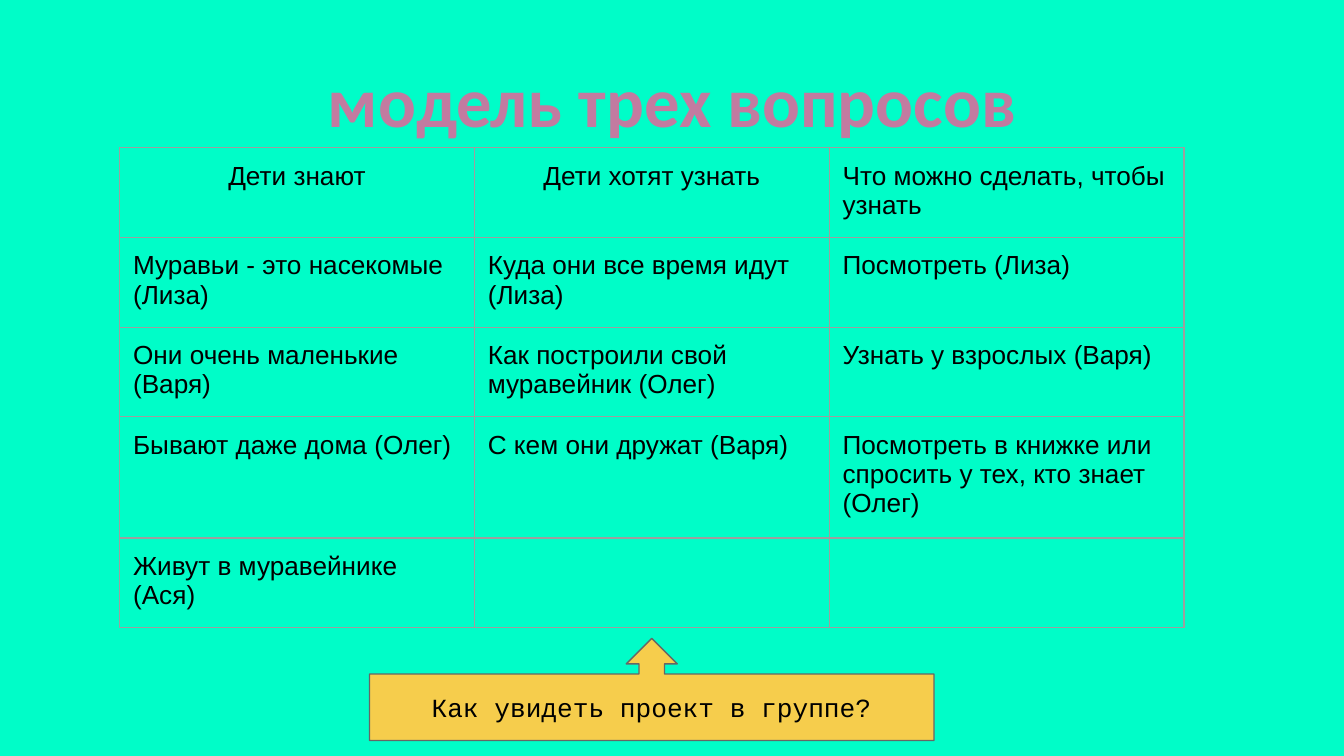
from dataclasses import dataclass

from lxml.etree import SubElement
from pptx import Presentation
from pptx.dml.color import RGBColor
from pptx.enum.shapes import MSO_SHAPE as Preset
from pptx.enum.text import MSO_ANCHOR as Anchor, PP_ALIGN as Align
from pptx.oxml.ns import qn
from pptx.util import Inches, Pt

WIDTH = 10
HEIGHT = WIDTH * 9 / 16


@dataclass(frozen=True)
class Theme:
    background: str = "00FDC8"
    title: str = "C27BA0"
    text: str = "000000"
    grid: str = "9E9E9E"
    callout: str = "F6CD4C"
    outline: str = "666666"
    title_size: float = 37.8
    text_size: float = 14
    line_width: float = 0.75
    inset: float = 0.1


@dataclass(frozen=True)
class Area:
    """A rectangle in inches."""
    left: float
    top: float
    width: float
    height: float

    def emu(self) -> tuple:
        return tuple(Inches(v) for v in (self.left, self.top, self.width, self.height))


@dataclass(frozen=True)
class Style:
    font: str
    size: float
    color: str
    bold: bool = False
    align: Align = Align.LEFT


THEME = Theme()
TITLE = Style("Calibri", THEME.title_size, THEME.title, True, Align.CENTER)
BODY = Style("Arial", THEME.text_size, THEME.text)
HEADING = Style("Arial", THEME.text_size, THEME.text, align=Align.CENTER)
CALLOUT = Style("Courier New", THEME.text_size, THEME.text, align=Align.CENTER)

TITLE_AREA = Area(0.34, 0.32, WIDTH - 2 * 0.34, 0.88)
TABLE_AREA = Area(0.89, 1.1, 3 * 2.64, 3.57)
CALLOUT_AREA = Area(2.75, 4.75, 4.2, 0.76)
ROW_HEIGHT = 0.42  # minimum: rows grow with their text
QUESTIONS = [
    ("Дети знают", "Дети хотят узнать", "Что можно сделать, чтобы узнать"),
    ("Муравьи - это насекомые (Лиза)", "Куда они все время идут (Лиза)",
     "Посмотреть (Лиза)"),
    ("Они очень маленькие (Варя)", "Как построили свой муравейник (Олег)",
     "Узнать у взрослых (Варя)"),
    ("Бывают даже дома (Олег)", "С кем они дружат (Варя)",
     "Посмотреть в книжке или спросить у тех, кто знает (Олег)"),
    ("Живут в муравейнике (Ася)", "", ""),
]


def rgb(color: str) -> RGBColor:
    return RGBColor.from_string(color)


def set_insets(holder) -> None:
    """Give a text frame or a table cell equal margins."""
    for side in ("left", "top", "right", "bottom"):
        setattr(holder, f"margin_{side}", Inches(THEME.inset))


def write(frame, text: str, style: Style) -> None:
    para = frame.paragraphs[0]
    para.alignment = style.align
    if text:
        span = para.add_run()
        span.text = text
        span.font.name = style.font
        span.font.size = Pt(style.size)
        span.font.bold = style.bold
        span.font.color.rgb = rgb(style.color)
    # The paragraph mark takes the text size, so it does not stretch the line
    SubElement(para._p, qn("a:endParaRPr"), sz=str(round(style.size * 100)))


def add_borders(cell) -> None:
    properties = cell._tc.get_or_add_tcPr()
    for index, tag in enumerate(("a:lnL", "a:lnR", "a:lnT", "a:lnB")):
        line = SubElement(properties, qn(tag), w=str(Pt(THEME.line_width)))
        fill = SubElement(line, qn("a:solidFill"))
        SubElement(fill, qn("a:srgbClr"), val=THEME.grid)
        properties.insert(index, line)  # borders come before the fill


def add_title(page, area: Area, text: str) -> None:
    frame = page.shapes.add_textbox(*area.emu()).text_frame
    frame.word_wrap = True
    set_insets(frame)
    frame.vertical_anchor = Anchor.TOP
    write(frame, text, TITLE)


def add_questions(page, area: Area, rows: list) -> None:
    holder = page.shapes.add_table(len(rows), len(rows[0]), *area.emu())
    table = holder.table
    table.first_row = table.horz_banding = False
    for r, row in enumerate(rows):
        table.rows[r].height = Inches(ROW_HEIGHT)
        for c, text in enumerate(row):
            cell = table.cell(r, c)
            cell.fill.background()
            set_insets(cell)
            add_borders(cell)
            write(cell.text_frame, text, HEADING if r == 0 and c < 2 else BODY)
    holder.height = Inches(area.height)


def add_callout(page, area: Area, text: str) -> None:
    box = page.shapes.add_shape(Preset.UP_ARROW_CALLOUT, *area.emu())
    for index, share in enumerate((0.25, 0.25, 0.25, 0.65)):
        box.adjustments[index] = share
    box.shadow.inherit = False
    box.fill.solid()
    box.fill.fore_color.rgb = rgb(THEME.callout)
    box.line.color.rgb = rgb(THEME.outline)
    box.line.width = Pt(THEME.line_width)
    box.text_frame.word_wrap = True
    set_insets(box.text_frame)
    box.text_frame.vertical_anchor = Anchor.MIDDLE
    write(box.text_frame, text, CALLOUT)


def main() -> None:
    deck = Presentation()
    deck.slide_width, deck.slide_height = Inches(WIDTH), Inches(HEIGHT)
    page = deck.slides.add_slide(deck.slide_layouts[6])

    # Background
    page.background.fill.solid()
    page.background.fill.fore_color.rgb = rgb(THEME.background)

    # Title, table of questions, callout below it
    add_title(page, TITLE_AREA, "модель трех вопросов")
    add_questions(page, TABLE_AREA, QUESTIONS)
    add_callout(page, CALLOUT_AREA, "Как увидеть проект в группе?")

    deck.save("out.pptx")


if __name__ == "__main__":
    main()
